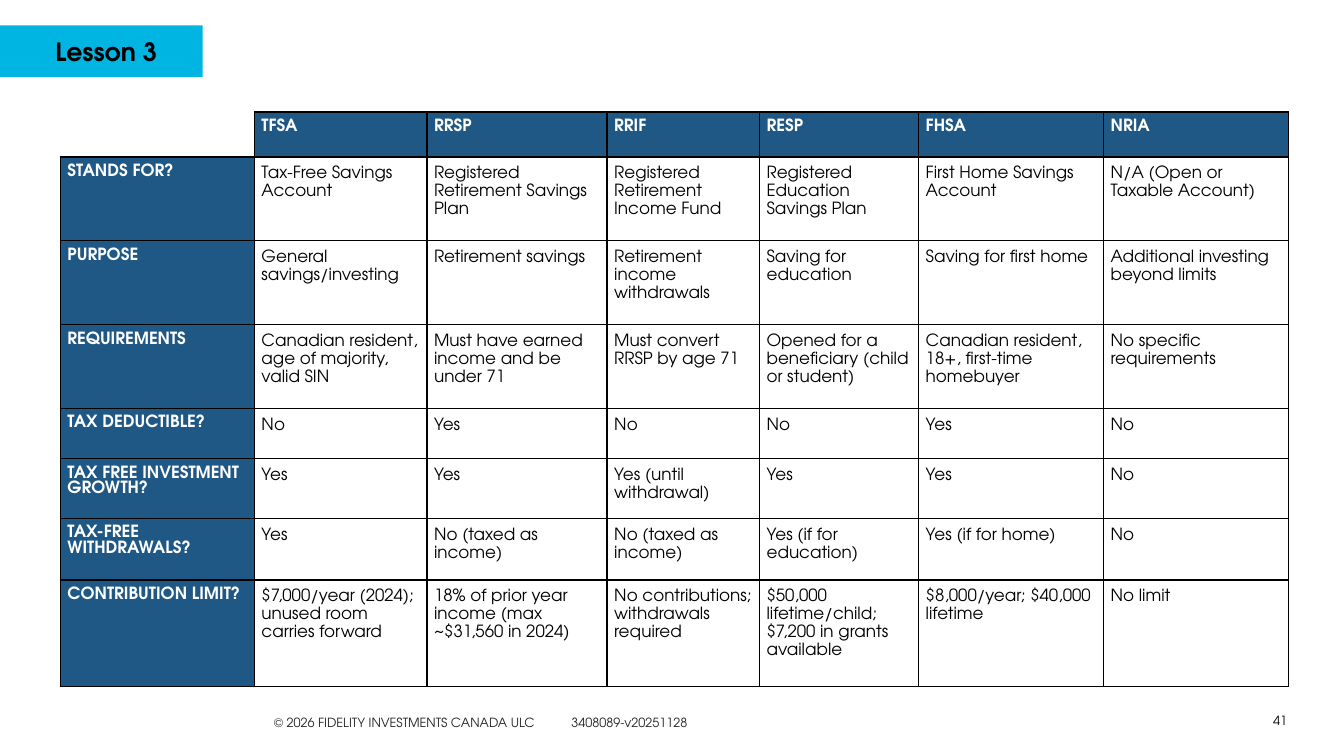
import lxml.etree
import pptx
import pptx.dml.color
import pptx.enum.shapes
import pptx.enum.text
import pptx.oxml.ns
import pptx.util

Cm = pptx.util.Cm
Pt = pptx.util.Pt
RGBColor = pptx.dml.color.RGBColor
ALIGN = pptx.enum.text.PP_ALIGN
ANCHOR = pptx.enum.text.MSO_ANCHOR
qn = pptx.oxml.ns.qn

CYAN = RGBColor(0x00, 0xB5, 0xE2)
NAVY = RGBColor(0x20, 0x58, 0x85)
BLACK = RGBColor(0x00, 0x00, 0x00)
GREY = RGBColor(0x22, 0x22, 0x22)
WHITE = RGBColor(0xFF, 0xFF, 0xFF)

FONT = "TeX Gyre Adventor"
TITLE = {"name": FONT, "size": Pt(18), "bold": True, "color": BLACK}
HEADING = {"name": FONT, "size": Pt(12), "bold": True, "color": WHITE}
BODY = {"name": FONT, "size": Pt(12), "bold": False, "color": BLACK}
FOOTER = {"name": FONT, "size": Pt(9), "bold": False, "color": GREY}
PAGE_NUMBER = {**FOOTER, "color": BLACK}

COLUMN_WIDTHS = [4.89, 4.35, 4.54, 3.84, 4.01, 4.66, 4.67]
ROW_HEIGHTS = [0.87, 2.11, 2.11, 2.11, 1.27, 1.5, 1.56, 2.68]
ACCOUNTS = [
    ["", "TFSA", "RRSP", "RRIF", "RESP", "FHSA", "NRIA"],
    ["STANDS FOR?", "Tax-Free Savings Account",
     "Registered Retirement Savings Plan",
     "Registered Retirement Income Fund",
     "Registered Education Savings Plan",
     "First Home Savings Account", "N/A (Open or Taxable Account)"],
    ["PURPOSE", "General savings/investing", "Retirement savings",
     "Retirement income withdrawals", "Saving for education",
     "Saving for first home", "Additional investing beyond limits"],
    ["REQUIREMENTS", "Canadian resident, age of majority, valid SIN",
     "Must have earned income and be under 71",
     "Must convert RRSP by age 71",
     "Opened for a beneficiary (child or student)",
     "Canadian resident, 18+, first-time homebuyer",
     "No specific requirements"],
    ["TAX DEDUCTIBLE?", "No", "Yes", "No", "No", "Yes", "No"],
    ["TAX FREE INVESTMENT GROWTH?", "Yes", "Yes", "Yes (until withdrawal)",
     "Yes", "Yes", "No"],
    ["TAX-FREE WITHDRAWALS?", "Yes", "No (taxed as income)",
     "No (taxed as income)", "Yes (if for education)",
     "Yes (if for home)", "No"],
    ["CONTRIBUTION LIMIT?",
     "$7,000/year (2024); unused room carries forward",
     "18% of prior year income (max ~$31,560 in 2024)",
     "No contributions; withdrawals required",
     "$50,000 lifetime/child; $7,200 in grants available",
     "$8,000/year; $40,000 lifetime", "No limit"],
]


def write(para, text, style):
    """Add one formatted span of text to a paragraph."""
    span = para.add_run()
    span.text = text
    for key, value in style.items():
        if key == "color":
            span.font.color.rgb = value
        else:
            setattr(span.font, key, value)


def place(box, left, top, width, height):
    box.left, box.top = Cm(left), Cm(top)
    box.width, box.height = Cm(width), Cm(height)


def set_frame(frame, anchor):
    frame.word_wrap = True
    frame.auto_size = pptx.enum.text.MSO_AUTO_SIZE.NONE
    frame.vertical_anchor = anchor


def add_lesson_tag(page, left, top, width, height):
    """Cyan band with the lesson title on it."""
    band = page.shapes.add_shape(
        pptx.enum.shapes.MSO_SHAPE.RECTANGLE,
        Cm(left), Cm(top), Cm(width), Cm(height))
    band.shadow.inherit = False
    band.fill.solid()
    band.fill.fore_color.rgb = CYAN
    band.line.fill.background()

    title = page.shapes.title
    place(title, left + 1.14, top + 0.15, width - 1.14, height - 0.3)
    set_frame(title.text_frame, ANCHOR.MIDDLE)
    para = title.text_frame.paragraphs[0]
    para.alignment = ALIGN.LEFT
    write(para, "Lesson 3", TITLE)
    band.element.addnext(title.element)  # title in front of the band


def set_borders(cell, sides):
    properties = cell._tc.get_or_add_tcPr()
    for side in sides:
        line = lxml.etree.SubElement(
            properties, qn("a:ln" + side), w=str(Pt(1)))
        fill = lxml.etree.SubElement(line, qn("a:solidFill"))
        lxml.etree.SubElement(fill, qn("a:srgbClr"), val=str(BLACK))


def fill_cell(cell, text, is_heading):
    for side in ("left", "right", "top", "bottom"):
        setattr(cell, "margin_" + side, Cm(0.18))
    set_borders(cell, "LRTB" if text else "RB")
    if text and is_heading:
        cell.fill.solid()
        cell.fill.fore_color.rgb = NAVY
    else:
        cell.fill.background()
    para = cell.text_frame.paragraphs[0]
    if not is_heading:
        para.line_spacing = 1.15
    if text:
        write(para, text, HEADING if is_heading else BODY)


def add_account_table(page, left, top):
    """Comparison grid with a heading row and a heading column."""
    table = page.shapes.add_table(
        len(ROW_HEIGHTS), len(COLUMN_WIDTHS), Cm(left), Cm(top),
        Cm(sum(COLUMN_WIDTHS)), Cm(sum(ROW_HEIGHTS))).table
    table.first_row = table.horz_banding = False
    for column, width in zip(table.columns, COLUMN_WIDTHS):
        column.width = Cm(width)
    for row, height in zip(table.rows, ROW_HEIGHTS):
        row.height = Cm(height)
    for r, texts in enumerate(ACCOUNTS):
        for c, text in enumerate(texts):
            fill_cell(table.cell(r, c), text, r == 0 or c == 0)


def add_footer(page, left, top, width, height):
    """Copyright line with a document code at a tab stop, and page number."""
    box = page.shapes.add_textbox(Cm(left), Cm(top), Cm(13.34), Cm(height))
    set_frame(box.text_frame, ANCHOR.TOP)
    para = box.text_frame.paragraphs[0]
    stops = lxml.etree.SubElement(
        para._p.get_or_add_pPr(), qn("a:tabLst"))
    lxml.etree.SubElement(
        stops, qn("a:tab"), pos=str(Cm(7.5)), algn="l")
    write(para, "© 2026 FIDELITY INVESTMENTS CANADA ULC\t3408089-v20251128",
          FOOTER)

    number_width = 1.78
    number = page.shapes.add_textbox(
        Cm(left + width - number_width), Cm(top + 0.05),
        Cm(number_width), Cm(0.46))
    set_frame(number.text_frame, ANCHOR.MIDDLE)
    para = number.text_frame.paragraphs[0]
    para.alignment = ALIGN.RIGHT
    write(para, "41", PAGE_NUMBER)


def main():
    deck = pptx.Presentation()
    deck.slide_width, deck.slide_height = Cm(33.87), Cm(19.05)
    page = deck.slides.add_slide(deck.slide_layouts.get_by_name("Title Only"))
    add_lesson_tag(page, 0, 0.64, 5.11, 1.3)
    add_account_table(page, 1.52, 2.82)
    add_footer(page, 6.65, 17.88, 26.04, 0.64)
    deck.save("out.pptx")


if __name__ == "__main__":
    main()
